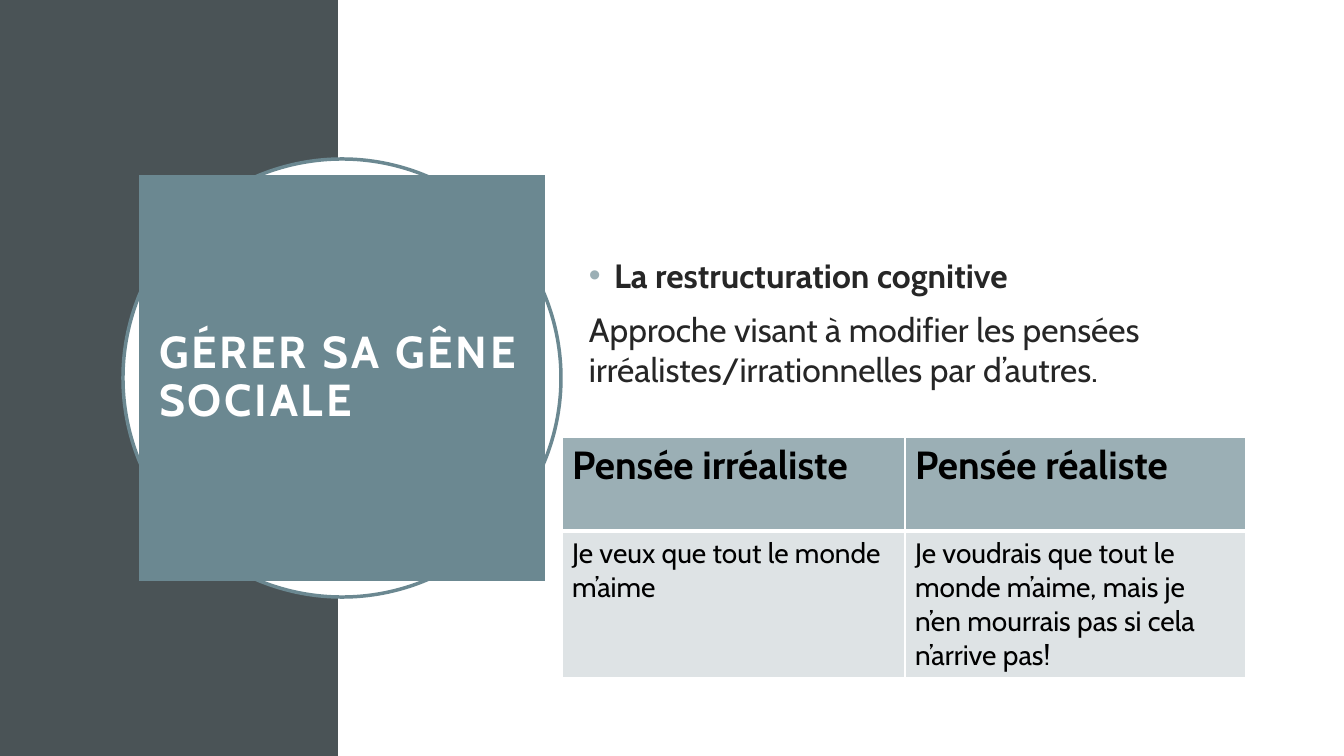
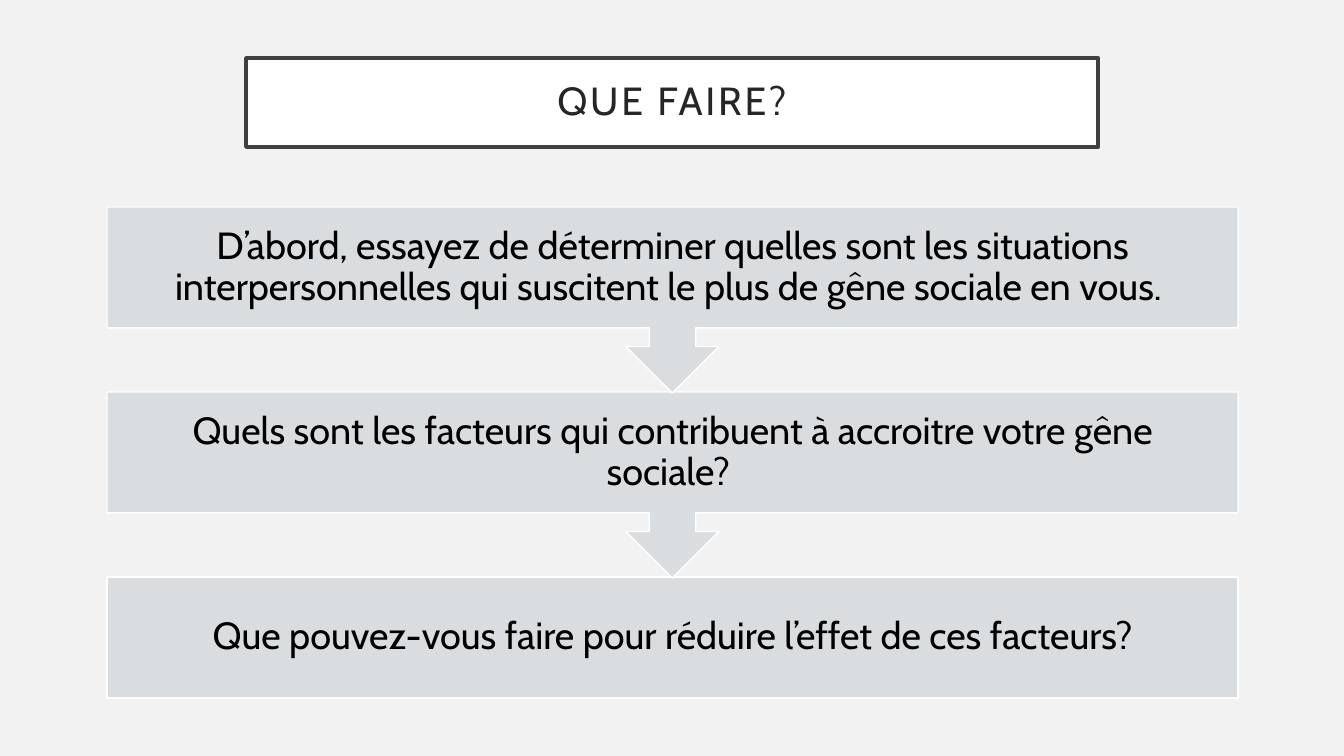
"""Builds two slides on handling social unease."""
from lxml import etree
from pptx import Presentation
from pptx import util as u
from pptx.dml.color import RGBColor
from pptx.enum import shapes, text
from pptx.oxml.ns import qn

EMU_PER_PX = 914400 / 100.8
SLIDE_WIDTH, SLIDE_HEIGHT = 1344, 756
FONT = "Cabin"
COLOURS = {
    "white": "FFFFFF", "black": "000000", "ink": "262626", "frame": "404040",
    "pale": "F2F2F2", "band": "4A5356", "teal": "6B8891",
    "header": "9BAFB5", "cell": "DEE3E5", "step": "D9DDDF",
}
LEFT, CENTRE = text.PP_ALIGN.LEFT, text.PP_ALIGN.CENTER
TOP, MIDDLE = text.MSO_ANCHOR.TOP, text.MSO_ANCHOR.MIDDLE


def px(length):
    """Turn pixels into EMU."""
    return u.Emu(round(length * EMU_PER_PX))


def colour(name):
    """Look up a named colour."""
    return RGBColor.from_string(COLOURS[name])


def set_attributes(target, values):
    """Set each attribute of the target from a dict."""
    for name, value in values.items():
        setattr(target, name, value)


def place(shape, box):
    """Move and size a shape by a pixel box."""
    names = ("left", "top", "width", "height")
    set_attributes(shape, dict(zip(names, map(px, box))))


def paint(shape, fill, line=None, width=1):
    """Give a shape its fill and outline."""
    shape.fill.solid()
    shape.fill.fore_color.rgb = colour(fill)
    if line:
        shape.line.color.rgb = colour(line)
        shape.line.width = u.Pt(width)
    else:
        shape.line.fill.background()


def set_frame(frame, inset, anchor=MIDDLE):
    """Set the wrapping, anchor and equal insets of a text frame."""
    sides = ("left", "right", "top", "bottom")
    set_attributes(frame, {f"margin_{side}": px(inset) for side in sides})
    set_attributes(frame, {"word_wrap": True, "vertical_anchor": anchor,
                           "auto_size": text.MSO_AUTO_SIZE.NONE})


def write(paragraph, words, size, ink, bold=False, tracking=0, **layout):
    """Fill a paragraph with one formatted run."""
    spacing = {"alignment": LEFT, "line_spacing": 1.0,
               "space_before": u.Pt(0), "space_after": u.Pt(0)}
    set_attributes(paragraph, {**spacing, **layout})
    run = paragraph.add_run()
    run.text = words
    set_attributes(run.font, {"name": FONT, "size": u.Pt(size), "bold": bold})
    run.font.color.rgb = colour(ink)
    if tracking:
        run.font._element.set("spc", str(tracking * 100))


def set_bullet(paragraph, indent=0, character=None):
    """Give a paragraph a coloured bullet, or none."""
    properties = paragraph._p.get_or_add_pPr()
    properties.set("marL", str(px(indent)))
    properties.set("indent", str(-px(indent)))
    if character is None:
        etree.SubElement(properties, qn("a:buNone"))
        return
    bullet_colour = etree.SubElement(properties, qn("a:buClr"))
    etree.SubElement(bullet_colour, qn("a:srgbClr"), val=COLOURS["header"])
    etree.SubElement(properties, qn("a:buFont"), typeface="Arial")
    etree.SubElement(properties, qn("a:buChar"), char=character)


def add_slide(presentation, layout, background):
    """Add a slide with a plain background."""
    slide = presentation.slides.add_slide(presentation.slide_layouts[layout])
    slide.background.fill.solid()
    slide.background.fill.fore_color.rgb = colour(background)
    return slide


def add_shape(slide, kind, box, fill, line=None, width=1):
    """Add a flat preset shape."""
    shape = slide.shapes.add_shape(kind, *map(px, box))
    shape.shadow.inherit = False
    paint(shape, fill, line, width)
    return shape


def set_title(slide, words, box, paint_values, **style):
    """Format the title placeholder and bring it to the front."""
    title = slide.shapes.title
    place(title, box)
    paint(title, **paint_values)
    set_frame(title.text_frame, 20)
    write(title.text_frame.paragraphs[0], words, tracking=2, line_spacing=0.9, **style)
    title.element.getparent().append(title.element)


def set_body(slide, box, heading, explanation):
    """Fill the body placeholder with a bulleted heading and a paragraph."""
    body = slide.placeholders[1]
    place(body, box)
    frame = body.text_frame
    set_frame(frame, 10)
    write(frame.paragraphs[0], heading, 24, "ink", bold=True)
    set_bullet(frame.paragraphs[0], 25, "•")
    paragraph = frame.add_paragraph()
    write(paragraph, explanation, 24, "ink", space_before=u.Pt(10))
    set_bullet(paragraph)


def set_borders(cell, widths):
    """Draw white cell borders, with widths in points by side."""
    properties = cell._tc.get_or_add_tcPr()
    for side in "LRTB":
        line = etree.SubElement(properties, qn(f"a:ln{side}"), w=str(u.Pt(widths[side])))
        fill = etree.SubElement(line, qn("a:solidFill"))
        etree.SubElement(fill, qn("a:srgbClr"), val=COLOURS["white"])


def add_comparison(slide, left, top, widths, heights, rows):
    """Add a table with a header row and body rows."""
    box = map(px, (left, top, sum(widths), sum(heights)))
    table = slide.shapes.add_table(len(rows), len(widths), *box).table
    for column, width in zip(table.columns, widths):
        column.width = px(width)
    for row, height in zip(table.rows, heights):
        row.height = px(height)
    thin = dict.fromkeys("LRTB", 1)
    header = {"fill": "header", "size": 28, "bold": True, "borders": {**thin, "B": 3}}
    body = {"fill": "cell", "size": 20, "bold": False, "borders": {**thin, "T": 3}}
    for row_index, row in enumerate(rows):
        style = body if row_index else header
        for column_index, words in enumerate(row):
            cell = table.cell(row_index, column_index)
            set_borders(cell, style["borders"])
            cell.fill.solid()
            cell.fill.fore_color.rgb = colour(style["fill"])
            cell.vertical_anchor = TOP
            write(cell.text_frame.paragraphs[0], words, style["size"], "black",
                  bold=style["bold"])


def add_steps(slide, left, top, width, pitch, steps):
    """Stack steps from the bottom up, each but the last pointing down."""
    kinds = shapes.MSO_SHAPE
    for index, words in reversed(list(enumerate(steps))):
        last = index == len(steps) - 1
        kind = kinds.RECTANGLE if last else kinds.DOWN_ARROW_CALLOUT
        height = 121 if last else 186
        box = (left, top + index * pitch, width, height)
        shape = add_shape(slide, kind, box, "step", "white")
        set_frame(shape.text_frame, 21)
        write(shape.text_frame.paragraphs[0], words, 27, "black",
              alignment=CENTRE, line_spacing=0.9)


def build_restructuring(presentation):
    """Build the slide on cognitive restructuring."""
    slide = add_slide(presentation, 1, "white")
    kinds = shapes.MSO_SHAPE
    add_shape(slide, kinds.RECTANGLE, (0, 0, 338, SLIDE_HEIGHT), "band")
    add_shape(slide, kinds.OVAL, (123, 159, 438, 438), "white", "teal", 2.5)
    set_title(slide, "GÉRER SA GÊNE SOCIALE", (139, 175, 406, 406),
              {"fill": "teal"}, size=32, ink="white", bold=True)
    set_body(slide, (579, 222, 765, 200), "La restructuration cognitive",
             "Approche visant à modifier les pensées "
             "irréalistes/irrationnelles par d’autres.")
    add_comparison(slide, 562, 437, (343, 341), (94, 146), (
        ("Pensée irréaliste", "Pensée réaliste"),
        ("Je veux que tout le monde m’aime",
         "Je voudrais que tout le monde m’aime, mais je n’en mourrais pas "
         "si cela n’arrive pas!"),
    ))


def build_actions(presentation):
    """Build the slide on what to do."""
    slide = add_slide(presentation, 5, "pale")
    set_title(slide, "QUE FAIRE?", (246, 58, 852, 89),
              {"fill": "white", "line": "frame", "width": 2.5},
              size=28, ink="ink", alignment=CENTRE)
    add_steps(slide, 107, 207, 1131, 185, (
        "D’abord, essayez de déterminer quelles sont les situations "
        "interpersonnelles qui suscitent le plus de gêne sociale en vous. ",
        "Quels sont les facteurs qui contribuent à accroitre votre gêne sociale? ",
        "Que pouvez-vous faire pour réduire l’effet de ces facteurs?",
    ))


def main():
    """Build and save the presentation."""
    presentation = Presentation()
    set_attributes(presentation, {"slide_width": px(SLIDE_WIDTH),
                                  "slide_height": px(SLIDE_HEIGHT)})
    build_restructuring(presentation)
    build_actions(presentation)
    presentation.save("out.pptx")


if __name__ == "__main__":
    main()
